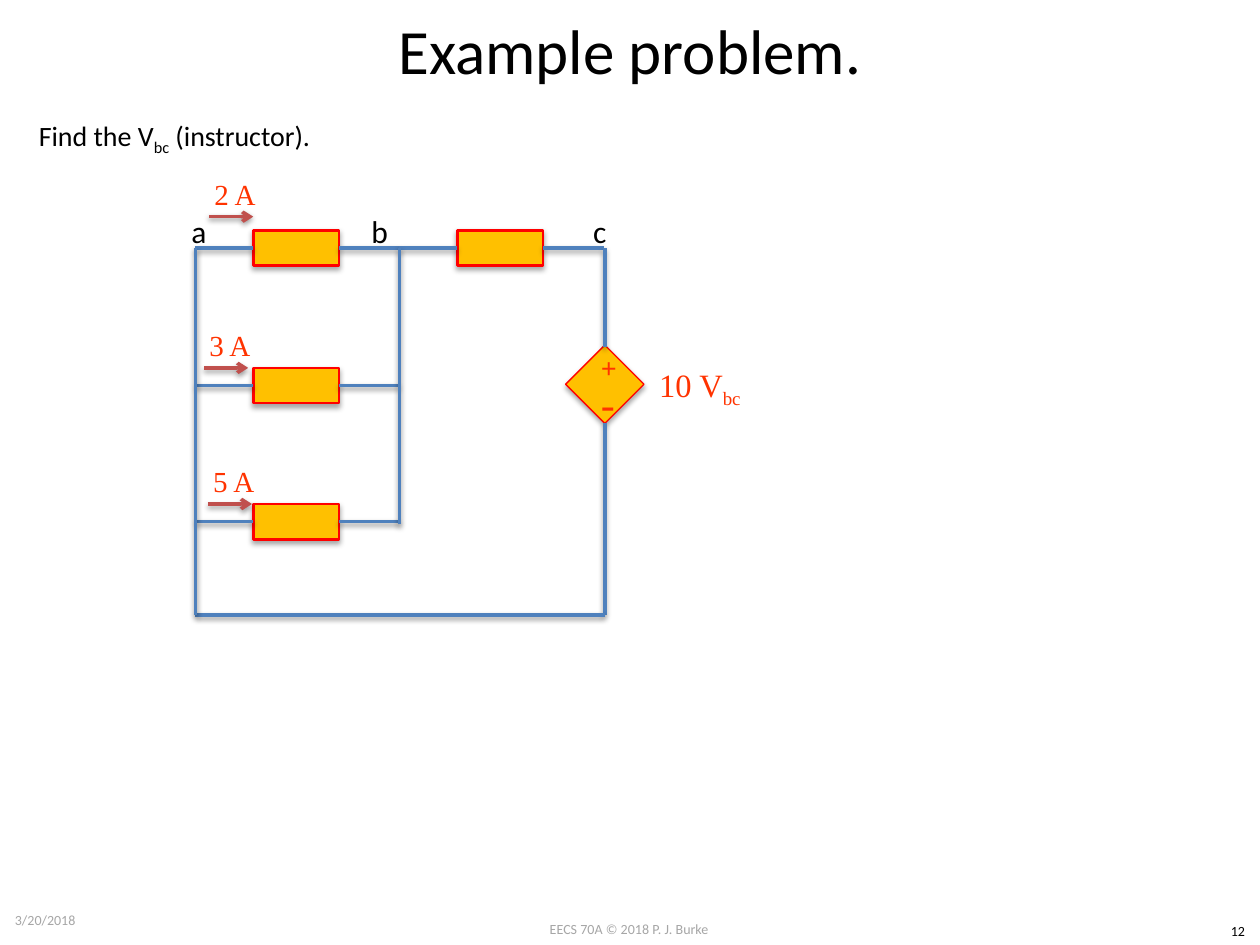
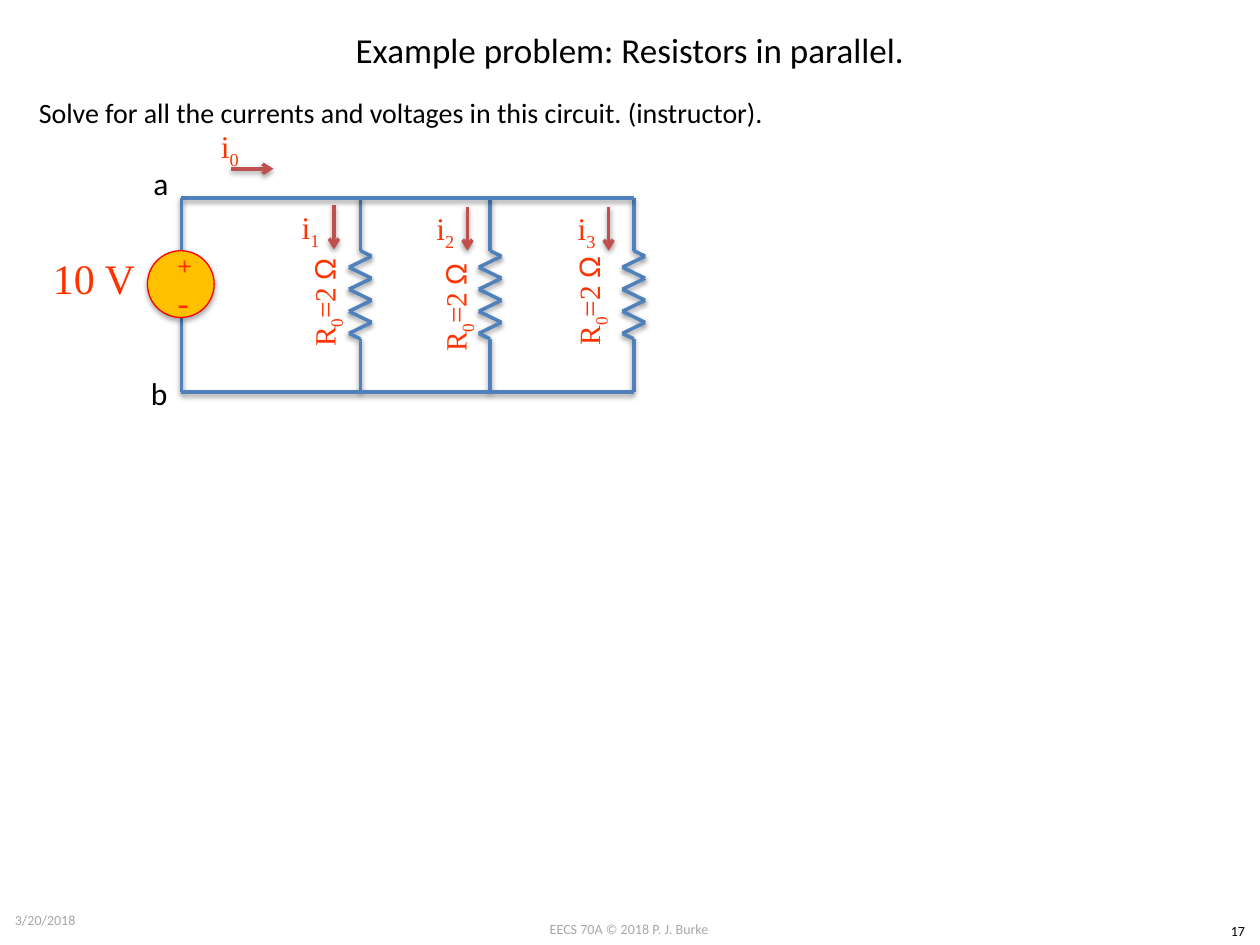
from itertools import pairwise

from lxml import etree
from pptx import Presentation
from pptx.dml.color import RGBColor
from pptx.enum import shapes, text
from pptx.oxml import ns
from pptx.util import Inches, Pt

BLACK = "000000"
GREY = "A6A6A6"
LABEL = "FF3300"
WIRE = "4F81BD"
ARROW = "C0504D"
BODY_FILL = "FFC000"
BODY_EDGE = "FF0000"
SANS = "Calibri"
SERIF = "Times New Roman"
CENTER = text.PP_ALIGN.CENTER
LEFT = text.PP_ALIGN.LEFT
TOP = text.MSO_ANCHOR.TOP
MIDDLE = text.MSO_ANCHOR.MIDDLE
WIRE_SHADOW = (1.6, 38)
BODY_SHADOW = (1.8, 35)


def color(hex_value):
    return RGBColor.from_string(hex_value)


def add_shadow(shape, shadow):
    distance, opacity = shadow
    properties = shape._element.spPr
    for effects in properties.findall(ns.qn("a:effectLst")):
        properties.remove(effects)
    effects = etree.SubElement(properties, ns.qn("a:effectLst"))
    outer = etree.SubElement(
        effects, ns.qn("a:outerShdw"), blurRad=str(Pt(3.1)),
        dist=str(Pt(distance)), dir="5400000", rotWithShape="0")
    tint = etree.SubElement(outer, ns.qn("a:srgbClr"), val=BLACK)
    etree.SubElement(tint, ns.qn("a:alpha"), val=str(opacity * 1000))


def add_text(slide, box, parts, size, font=SANS, fill=BLACK, align=LEFT,
             anchor=TOP, wrap=True, rotation=0):
    """Parts alternate between the baseline and the subscript."""
    shape = slide.shapes.add_textbox(*map(Inches, box))
    shape.rotation = rotation
    frame = shape.text_frame
    frame.word_wrap = wrap
    frame.vertical_anchor = anchor
    paragraph = frame.paragraphs[0]
    paragraph.alignment = align
    paragraph.font.size = Pt(size)
    paragraph.font.name = font
    paragraph.font.color.rgb = color(fill)
    for index, part in enumerate(parts):
        run = paragraph.add_run()
        run.text = part
        if index % 2:
            run._r.get_or_add_rPr().set("baseline", "-25000")
    return paragraph


def add_label(slide, box, parts, size, rotation=0):
    return add_text(slide, box, parts, size, SERIF, LABEL, CENTER, MIDDLE,
                    rotation=rotation)


def add_node(slide, left, top, name):
    add_text(slide, (left, top, 0.33, 0.4), [name], 18, wrap=False)


def add_line(slide, start, end, stroke=WIRE):
    line = slide.shapes.add_connector(
        shapes.MSO_CONNECTOR.STRAIGHT, *map(Inches, (*start, *end)))
    line.line.color.rgb = color(stroke)
    line.line.width = Pt(2)
    add_shadow(line, WIRE_SHADOW)
    return line


def add_wire(slide, *points):
    for start, end in pairwise(points):
        add_line(slide, start, end)


def add_arrow(slide, start, end):
    arrow = add_line(slide, start, end, ARROW)
    etree.SubElement(arrow.line._get_or_add_ln(), ns.qn("a:tailEnd"),
                     type="arrow")


def add_body(slide, kind, box, edge_width, rotation=0):
    body = slide.shapes.add_shape(kind, *map(Inches, box))
    body.rotation = rotation
    body.fill.solid()
    body.fill.fore_color.rgb = color(BODY_FILL)
    body.line.color.rgb = color(BODY_EDGE)
    body.line.width = Pt(edge_width)
    add_shadow(body, BODY_SHADOW)


def add_polarity(slide, left, plus_top, minus_top, plus_size, minus_size):
    plus = add_label(slide, (left, plus_top, 0.26, 0.33), ["+"], plus_size)
    plus.font.bold = True
    add_label(slide, (left, minus_top, 0.26, 0.33), ["-"], minus_size)


def add_box_element(slide, left, y):
    add_body(slide, shapes.MSO_SHAPE.RECTANGLE,
             (left + 0.46, y - 0.14, 0.68, 0.28), 1.5)
    add_wire(slide, (left + 1.62, y), (left + 1.14, y))
    add_wire(slide, (left + 0.46, y), (left, y))


def add_resistor(slide, x, top, bottom):
    zigzag_top, zigzag_bottom, teeth = 1.99, 2.69, 8
    step = (zigzag_bottom - zigzag_top) / teeth
    turns = [(x + (0.09 if tooth % 2 == 0 else -0.09),
              zigzag_top + (tooth + 0.5) * step) for tooth in range(teeth)]
    add_wire(slide, (x, top), (x, zigzag_top), *turns,
             (x, zigzag_bottom), (x, bottom))


def add_frame(presentation, title, title_size, number, question, question_top):
    slide = presentation.slides.add_slide(presentation.slide_layouts[6])
    add_text(slide, (3.83, 7.26, 2.33, 0.24), ["EECS 70A © 2018 P. J. Burke"],
             8, fill=GREY, align=CENTER)
    add_text(slide, (9.65, 7.27, 0.35, 0.24), [number], 8, align=CENTER)
    add_text(slide, (0.02, 7.1, 2.33, 0.4), ["3/20/2018"], 8, fill=GREY,
             anchor=MIDDLE)
    add_text(slide, (0.5, 0, 9, 0.78), [title], title_size, align=CENTER,
             anchor=MIDDLE)
    width = 2.47 if len(question) > 1 else 5.97
    add_text(slide, (0.21, question_top, width, 0.37), question, 16,
             wrap=False)
    return slide


def build_dependent_source(presentation):
    slide = add_frame(presentation, "Example problem.", 36, "12",
                      ["Find the V", "bc", " (instructor)."], 0.89)
    node_a, node_b, node_c = 1.55, 3.17, 4.8
    top, bottom = 1.97, 4.88
    for left, y in ((node_a, top), (node_a, 3.06), (node_a, 4.14),
                    (node_b, top)):
        add_box_element(slide, left, y)

    add_body(slide, shapes.MSO_SHAPE.RECTANGLE, (4.58, 2.83, 0.44, 0.44),
             0.75, 45)
    add_polarity(slide, 4.67, 2.75, 3.03, 16, 24)
    add_wire(slide, (node_c, 2.75), (node_c, top))
    add_wire(slide, (node_c, 3.36), (node_c, bottom), (node_a, bottom),
             (node_a, top))
    add_wire(slide, (node_b, 4.16), (node_b, top))

    for left, name in ((1.42, "a"), (2.85, "b"), (4.61, "c")):
        add_node(slide, left, 1.63, name)
    add_label(slide, (5.11, 2.79, 0.89, 0.57), ["10 V", "bc"], 18.6)
    for current, x, y in (("2 A", 1.66, 1.72), ("3 A", 1.62, 2.92),
                          ("5 A", 1.65, 4)):
        add_label(slide, (x - 0.11, y - 0.37, 0.63, 0.37), [current], 16.6)
        add_arrow(slide, (x, y), (x + 0.35, y))


def build_parallel_resistors(presentation):
    slide = add_frame(
        presentation, "Example problem: Resistors in parallel.", 20, "17",
        ["Solve for all the currents and voltages in this circuit. "
         "(instructor)."], 0.71)
    source_x, right = 1.44, 5.03
    top, bottom = 1.57, 3.11
    for x in (2.86, 3.89, right):
        add_resistor(slide, x, top, bottom)
    add_wire(slide, (right, top), (source_x, top), (source_x, 1.99))
    add_wire(slide, (source_x, 2.52), (source_x, bottom), (right, bottom))

    add_body(slide, shapes.MSO_SHAPE.OVAL, (1.17, 1.99, 0.53, 0.53), 0.75)
    add_polarity(slide, 1.31, 1.94, 2.23, 14.8, 20)
    add_label(slide, (0.31, 1.96, 0.87, 0.49), ["10 V"], 24)

    for index, left, current_top in (("0", 1.36, 0.92), ("1", 2, 1.56),
                                     ("2", 3.07, 1.57), ("3", 4.19, 1.57)):
        add_label(slide, (left, current_top, 0.93, 0.52), ["i", index], 18)
    add_arrow(slide, (1.83, 1.34), (2.17, 1.34))
    for x, y in ((2.65, 1.63), (3.71, 1.64), (4.83, 1.64)):
        add_arrow(slide, (x, y), (x, y + 0.35))

    for left, value_top in ((2.09, 2.14), (3.13, 2.18), (4.19, 2.13)):
        value = add_label(slide, (left, value_top, 1, 0.52),
                          ["R", "0", "=2 "], 16.8, 270)
        ohm = value.add_run()
        ohm.text = "Ω"
        ohm.font.name = "Arial"
    add_node(slide, 1.12, 1.25, "a")
    add_node(slide, 1.1, 2.92, "b")


def main():
    presentation = Presentation()
    presentation.slide_width = Inches(10)
    presentation.slide_height = Inches(7.5)
    build_dependent_source(presentation)
    build_parallel_resistors(presentation)
    presentation.save("out.pptx")


if __name__ == "__main__":
    main()
